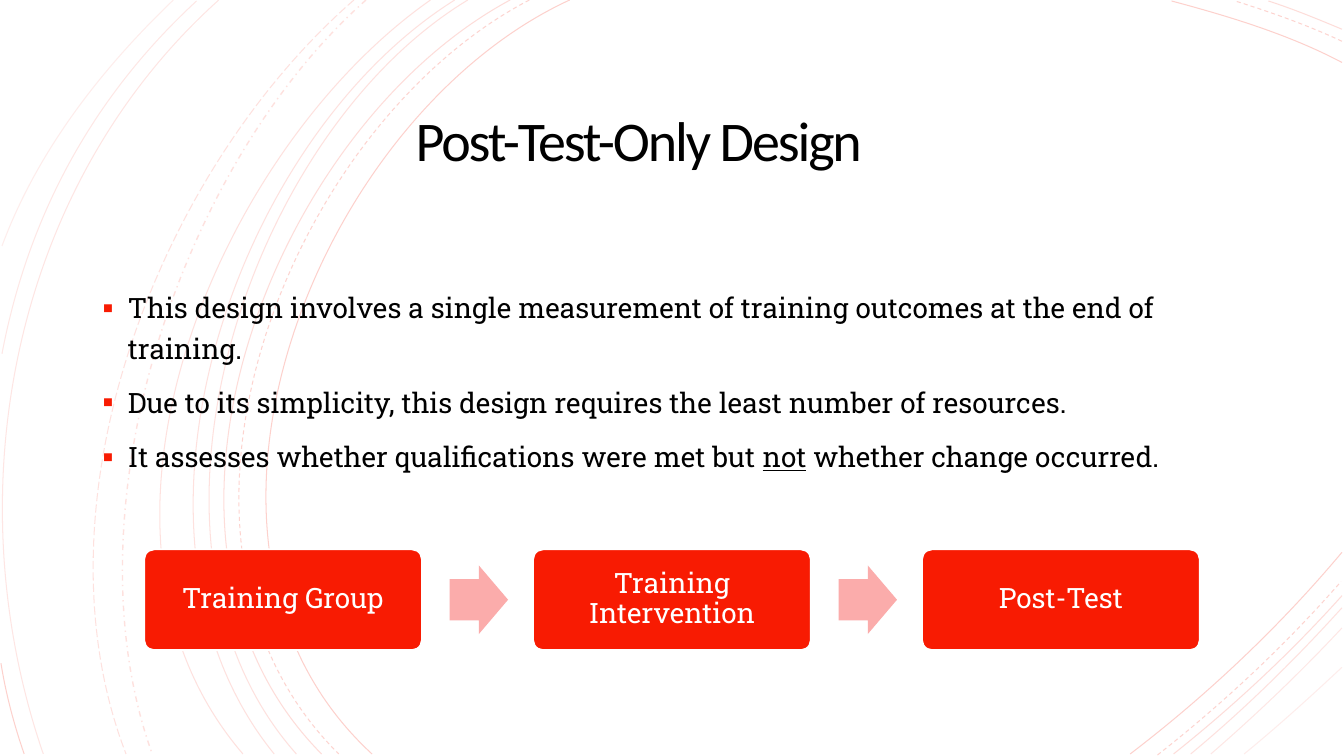
from lxml.etree import SubElement
from pptx import Presentation
from pptx.dml.color import RGBColor
from pptx.enum.dml import MSO_LINE
from pptx.enum.shapes import MSO_SHAPE
from pptx.enum.text import MSO_ANCHOR, PP_ALIGN
from pptx.oxml.ns import qn
from pptx.util import Inches, Pt

WIDTH, HEIGHT = 13.33, 7.5
COLORS = {"red": "F81B02", "pink": "FBACAB", "black": "000000", "white": "FFFFFF"}
HEADING_FONT, BODY_FONT = "Calibri", "Roboto Slab"
SOLID, DASH = MSO_LINE.SOLID, MSO_LINE.DASH

# Start, two control points, end (inches); opacity in percent; dash style
ARCS = [
    ((5.65, 0), (3.15, 1.15), (1.43, 5.4), (3.69, 7.48), 20, SOLID),
    ((13.31, 0.62), (12.78, 0.34), (12.18, 0.16), (11.62, 0.01), 20, SOLID),
    ((11.21, 7.48), (11.97, 6.9), (12.69, 6.22), (13.31, 5.48), 20, SOLID),
    ((5.25, 0), (2.85, 1.25), (1.23, 5.37), (3.36, 7.48), 18, DASH),
    ((13.31, 0.41), (12.97, 0.25), (12.6, 0.12), (12.25, 0.01), 18, DASH),
    ((11.48, 7.49), (12.13, 6.98), (12.75, 6.4), (13.3, 5.77), 18, DASH),
    ((5.06, 0), (2.7, 1.27), (1.1, 5.37), (3.19, 7.48), 15, SOLID),
    ((13.31, 0.29), (13.07, 0.19), (12.83, 0.09), (12.58, 0.01), 15, SOLID),
    ((11.64, 7.48), (12.23, 7.01), (12.8, 6.48), (13.31, 5.91), 15, SOLID),
    ((4.64, 0), (2.44, 1.33), (1.1, 5.41), (2.94, 7.48), 13, SOLID),
    ((11.81, 7.48), (12.34, 7.04), (12.84, 6.55), (13.31, 6.03), 12, SOLID),
    ((4.51, 0), (2.31, 1.38), (0.97, 5.33), (2.72, 7.48), 13, SOLID),
    ((12.01, 7.48), (12.46, 7.09), (12.9, 6.67), (13.31, 6.23), 10, SOLID),
    ((4.27, 0), (2.17, 1.47), (0.53, 5.29), (2.41, 7.48), 12, SOLID),
    ((12.34, 7.48), (12.67, 7.21), (12.99, 6.92), (13.31, 6.62), 8, SOLID),
    ((3.63, 0), (1.76, 1.66), (0.65, 5.09), (1.51, 7.48), 12, MSO_LINE.DASH_DOT),
    ((3.51, 0), (1.57, 1.69), (0.29, 4.99), (1.25, 7.48), 12, MSO_LINE.LONG_DASH),
    ((2.17, 0), (0.11, 1.85), (-0.46, 4.9), (0.43, 7.48), 11, SOLID),
    ((1.95, 0.01), (0.92, 0.96), (0.28, 2.14), (0.02, 3.51), 10, SOLID),
    ((0.01, 6.58), (0.06, 6.89), (0.14, 7.19), (0.24, 7.48), 20, SOLID),
    ((1.72, 0), (1, 0.69), (0.37, 1.5), (0.02, 2.44), 8, SOLID),
]
BULLETS = [
    ["This design involves a single measurement of training outcomes at the end of training."],
    ["Due to its simplicity, this design requires the least number of resources."],
    ["It assesses whether qualifications were met but ", ("not", True), " whether change occurred."],
]
STEPS = ["Training Group", "Training Intervention", "Post-Test"]


def rgb(name):
    return RGBColor.from_string(COLORS[name])


def bend(arc):
    """Turn the three straight segments of a freeform into one cubic curve."""
    segments = list(arc._element.iter(qn("a:lnTo")))
    outline = segments[0].getparent()
    curve = SubElement(outline, qn("a:cubicBezTo"))
    for segment in segments:
        curve.append(segment[0])
        outline.remove(segment)


def add_arcs(slide):
    group = slide.shapes.add_group_shape()
    for *corners, opacity, dash in ARCS:
        first, *rest = [(Inches(x), Inches(y)) for x, y in corners]
        builder = group.shapes.build_freeform(*first, scale=1.0)
        builder.add_line_segments(rest, close=False)
        arc = builder.convert_to_shape()
        bend(arc)
        arc.shadow.inherit = False
        arc.fill.background()
        arc.line.color.rgb = rgb("red")
        arc.line.width = Pt(1 if dash == MSO_LINE.DASH_DOT else 0.75)
        arc.line.dash_style = dash
        color = arc.line._ln.find(".//" + qn("a:srgbClr"))
        SubElement(color, qn("a:alpha"), val=str(opacity * 1000))


def set_frame(frame, margin, anchor):
    frame.word_wrap = True
    frame.vertical_anchor = anchor
    frame.margin_left = frame.margin_right = Inches(margin)
    frame.margin_top = frame.margin_bottom = Inches(margin)


def add_bullet(paragraph):
    properties = paragraph._p.get_or_add_pPr()
    properties.set("marL", str(Inches(0.25)))
    properties.set("indent", str(Inches(-0.25)))
    bullet_color = SubElement(properties, qn("a:buClr"))
    SubElement(bullet_color, qn("a:srgbClr"), val=COLORS["red"])
    SubElement(properties, qn("a:buSzPct"), val="110000")
    SubElement(properties, qn("a:buFont"), typeface=HEADING_FONT)
    SubElement(properties, qn("a:buChar"), char="▪")


def write(paragraph, parts, font=BODY_FONT, size=20, color="black",
          align=PP_ALIGN.LEFT, line_spacing=1.0, before=0, spacing=None):
    """Parts are strings or (string, underlined) pairs; spacing is in points."""
    paragraph.alignment = align
    paragraph.line_spacing = line_spacing
    paragraph.space_before = Pt(before)
    for part in parts:
        text, underlined = part if isinstance(part, tuple) else (part, False)
        run = paragraph.add_run()
        run.text = text
        run.font.name = font
        run.font.size = Pt(size)
        run.font.color.rgb = rgb(color)
        if underlined:
            run.font.underline = True
        if spacing is not None:
            run._r.get_or_add_rPr().set("spc", str(int(spacing * 100)))


def add_title(slide, left, top, width, height):
    box = slide.shapes.add_textbox(Inches(left), Inches(top), Inches(width), Inches(height))
    set_frame(box.text_frame, 0.25, MSO_ANCHOR.MIDDLE)
    write(box.text_frame.paragraphs[0], ["Post-Test-Only Design"], font=HEADING_FONT,
          size=40, align=PP_ALIGN.CENTER, line_spacing=0.85, spacing=-1.5)


def add_bullets(slide, left, top, width, height):
    box = slide.shapes.add_textbox(Inches(left), Inches(top), Inches(width), Inches(height))
    frame = box.text_frame
    set_frame(frame, 0.1, MSO_ANCHOR.TOP)
    for index, parts in enumerate(BULLETS):
        paragraph = frame.add_paragraph() if index else frame.paragraphs[0]
        add_bullet(paragraph)
        write(paragraph, parts, line_spacing=1.2, before=10 if index else 0)


def add_block(slide, preset, left, top, width, height, fill, adjustments=()):
    shape = slide.shapes.add_shape(
        preset, Inches(left), Inches(top), Inches(width), Inches(height))
    shape.shadow.inherit = False
    shape.fill.solid()
    shape.fill.fore_color.rgb = rgb(fill)
    shape.line.fill.background()
    for index, value in enumerate(adjustments):
        shape.adjustments[index] = value
    return shape


def add_process(slide, left, top, width, height):
    """Equal steps with an arrow in each gap; a gap is 0.4 of a step."""
    count = len(STEPS)
    step_width = width / (count + 0.4 * (count - 1))
    arrow_width, arrow_height = 0.21 * step_width, 0.68 * height
    for index, label in enumerate(STEPS):
        step_left = left + index * 1.4 * step_width
        if index:
            add_block(slide, MSO_SHAPE.RIGHT_ARROW, step_left - 0.3 * step_width,
                      top + (height - arrow_height) / 2, arrow_width, arrow_height,
                      "pink", (0.6, 0.5))
        step = add_block(slide, MSO_SHAPE.ROUNDED_RECTANGLE, step_left, top,
                         step_width, height, "red", (0.1,))
        step.line.color.rgb = rgb("white")
        step.line.width = Pt(1.25)
        set_frame(step.text_frame, 0.11, MSO_ANCHOR.MIDDLE)
        write(step.text_frame.paragraphs[0], [label], color="white",
              align=PP_ALIGN.CENTER, line_spacing=0.9)


def main():
    presentation = Presentation()
    presentation.slide_width, presentation.slide_height = Inches(WIDTH), Inches(HEIGHT)
    slide = presentation.slides.add_slide(presentation.slide_layouts[6])
    margin = 0.92
    add_block(slide, MSO_SHAPE.RECTANGLE, 0, 0, WIDTH, HEIGHT, "white")
    add_arcs(slide)
    add_title(slide, margin, 0.69, 10.83, 1.48)
    add_bullets(slide, margin, 2.72, 11.5, 2.1)
    add_process(slide, 1.43, 5.45, 10.47, 1)
    presentation.save("out.pptx")


if __name__ == "__main__":
    main()
